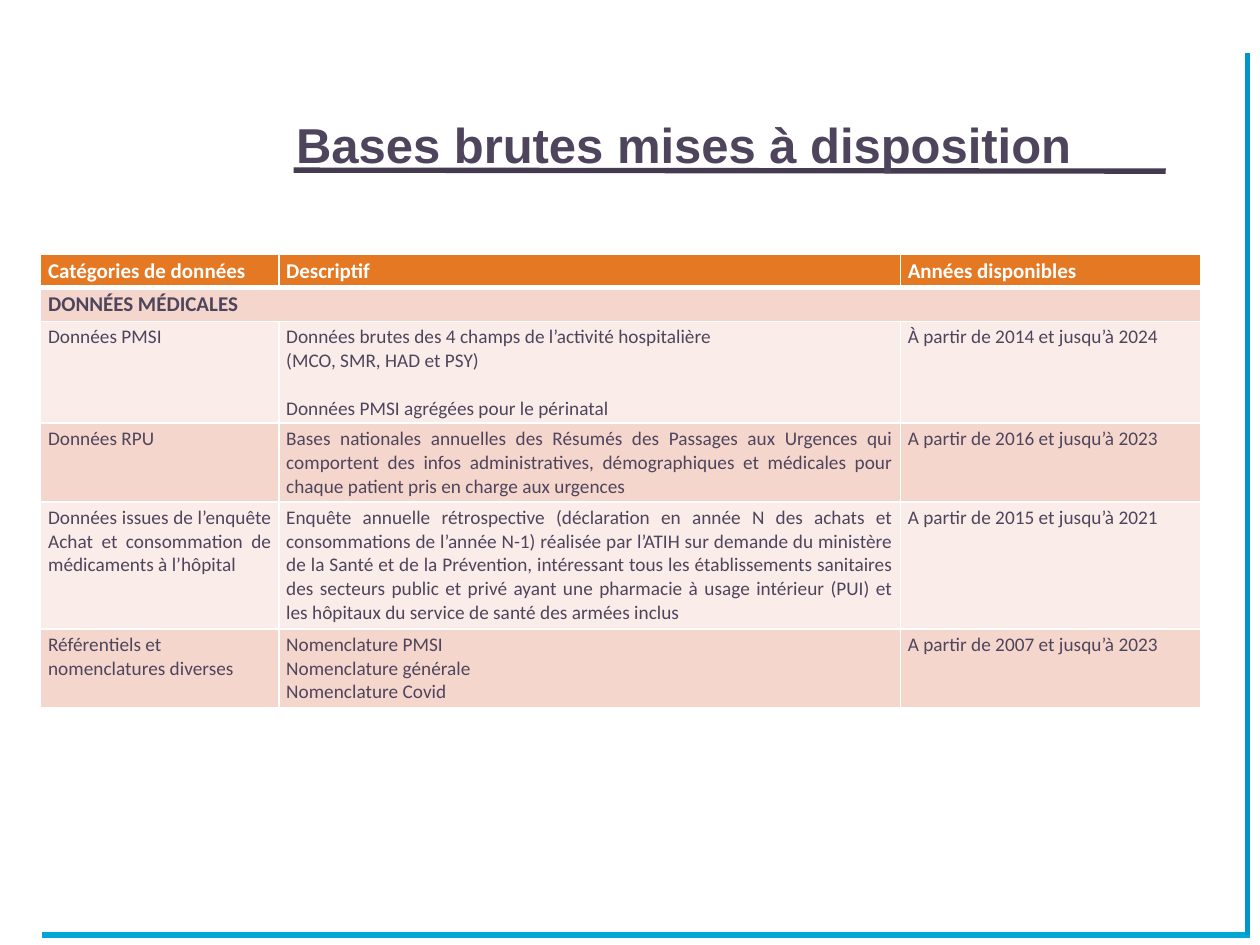
from lxml.etree import SubElement
from pptx import Presentation
from pptx.dml.color import RGBColor
from pptx.enum.shapes import MSO_CONNECTOR
from pptx.enum.text import MSO_ANCHOR, PP_ALIGN
from pptx.oxml.ns import qn
from pptx.util import Cm, Pt

WHITE = RGBColor(0xFF, 0xFF, 0xFF)
INK = RGBColor(0x4E, 0x45, 0x5D)
PLUM = RGBColor(0x45, 0x3B, 0x50)
CYAN = RGBColor(0x02, 0xA7, 0xD5)
BLUE = RGBColor(0x00, 0x95, 0xCB)
ORANGE = RGBColor(0xE4, 0x78, 0x23)
ROSE = RGBColor(0xF5, 0xD6, 0xCD)
PALE = RGBColor(0xFA, 0xEC, 0xE8)

LEFT, JUST = PP_ALIGN.LEFT, PP_ALIGN.JUSTIFY
WIDTHS = [4.8, 12.53, 6.05]
HEIGHTS = [0.66, 0.68, 2.05, 1.59, 2.56, 1.59]
HEAD = ["Catégories de données", "Descriptif", "Années disponibles"]
GROUP = "DONNÉES MÉDICALES"
ROWS = [
    ("Données PMSI",
     ["Données brutes des 4 champs de l’activité hospitalière",
      "(MCO, SMR, HAD et PSY)",
      "Données PMSI agrégées pour le périnatal"],
     "À partir de 2014 et jusqu’à 2024"),
    ("Données RPU",
     ["Bases nationales annuelles des Résumés des Passages aux Urgences qui "
      "comportent des infos administratives, démographiques et médicales pour "
      "chaque patient pris en charge aux urgences"],
     "A partir de 2016 et jusqu’à 2023"),
    ("Données issues de l’enquête Achat et consommation de médicaments à l’hôpital",
     ["Enquête annuelle rétrospective (déclaration en année N des achats et "
      "consommations de l’année N-1) réalisée par l’ATIH sur demande du ministère "
      "de la Santé et de la Prévention, intéressant tous les établissements "
      "sanitaires des secteurs public et privé ayant une pharmacie à usage "
      "intérieur (PUI) et les hôpitaux du service de santé des armées inclus"],
     "A partir de 2015 et jusqu’à 2021"),
    ("Référentiels et nomenclatures diverses",
     ["Nomenclature PMSI", "Nomenclature générale", "Nomenclature Covid"],
     "A partir de 2007 et jusqu’à 2023"),
]


class Deck:
    def __init__(self):
        self.show = Presentation()
        self.show.slide_width, self.show.slide_height = Cm(25.4), Cm(19.05)
        self.slide = self.show.slides.add_slide(self.show.slide_layouts[6])

    def line(self, x1, y1, x2, y2, color):
        line = self.slide.shapes.add_connector(
            MSO_CONNECTOR.STRAIGHT, Cm(x1), Cm(y1), Cm(x2), Cm(y2))
        line.line.color.rgb = color
        line.line.width = Pt(3.06)
        SubElement(line._element.spPr, qn("a:effectLst"))

    def text(self, frame, texts, size, color, bold=False, align=LEFT, face="Calibri"):
        frame.word_wrap = True
        for i, text in enumerate(texts):
            para = frame.paragraphs[0] if i == 0 else frame.add_paragraph()
            para.text = text
            para.alignment = align
            font = para.font
            font.name, font.size, font.bold = face, Pt(size), bold
            font.color.rgb = color

    def title(self, text, x, y, w, h):
        frame = self.slide.shapes.add_textbox(Cm(x), Cm(y), Cm(w), Cm(h)).text_frame
        frame.vertical_anchor = MSO_ANCHOR.BOTTOM
        self.text(frame, [text], 28, INK, True, face="Arial")

    def table(self, x, y, widths, heights):
        grid = self.slide.shapes.add_table(
            len(heights), len(widths), Cm(x), Cm(y),
            Cm(sum(widths)), Cm(sum(heights))).table
        for col, width in zip(grid.columns, widths):
            col.width = Cm(width)
        for row, height in zip(grid.rows, heights):
            row.height = Cm(height)
        return grid

    def cell(self, cell, fill, base=1, top=1):
        cell.margin_left = cell.margin_right = Cm(0.15)
        cell.margin_top = cell.margin_bottom = Cm(0.08)
        props = cell._tc.get_or_add_tcPr()
        for side, width in zip("LRTB", (1, 1, top, base)):
            edge = SubElement(props, qn(f"a:ln{side}"), w=str(Pt(width)))
            paint = SubElement(edge, qn("a:solidFill"))
            SubElement(paint, qn("a:srgbClr"), val=str(WHITE))
        cell.fill.solid()
        cell.fill.fore_color.rgb = fill


def main():
    deck = Deck()
    deck.line(5.92, 3.43, 23.5, 3.45, PLUM)
    deck.line(0.84, 18.85, 25.2, 18.85, CYAN)
    deck.line(25.15, 18.85, 25.15, 1.07, BLUE)
    deck.title("Bases brutes mises à disposition", 5.72, 0.84, 16.94, 2.77)

    grid = deck.table(0.82, 5.13, WIDTHS, HEIGHTS)
    for c, text in enumerate(HEAD):
        deck.cell(grid.cell(0, c), ORANGE, base=3)
        deck.text(grid.cell(0, c).text_frame, [text], 12, WHITE, True)
        deck.cell(grid.cell(1, c), ROSE, top=3)
    grid.cell(1, 0).merge(grid.cell(1, 2))
    deck.text(grid.cell(1, 0).text_frame, [GROUP], 12, INK, True)

    for r, (name, notes, years) in enumerate(ROWS, 2):
        first = LEFT if name.startswith("Réf") else JUST
        parts = ([name], first), (notes, JUST), ([years], LEFT)
        for c, (texts, align) in enumerate(parts):
            cell = grid.cell(r, c)
            deck.cell(cell, ROSE if r % 2 else PALE)
            deck.text(cell.text_frame, texts, 11, INK, align=align)
    grid.cell(2, 1).text_frame.paragraphs[-1].space_before = Pt(13.5)
    deck.show.save("out.pptx")


if __name__ == "__main__":
    main()
